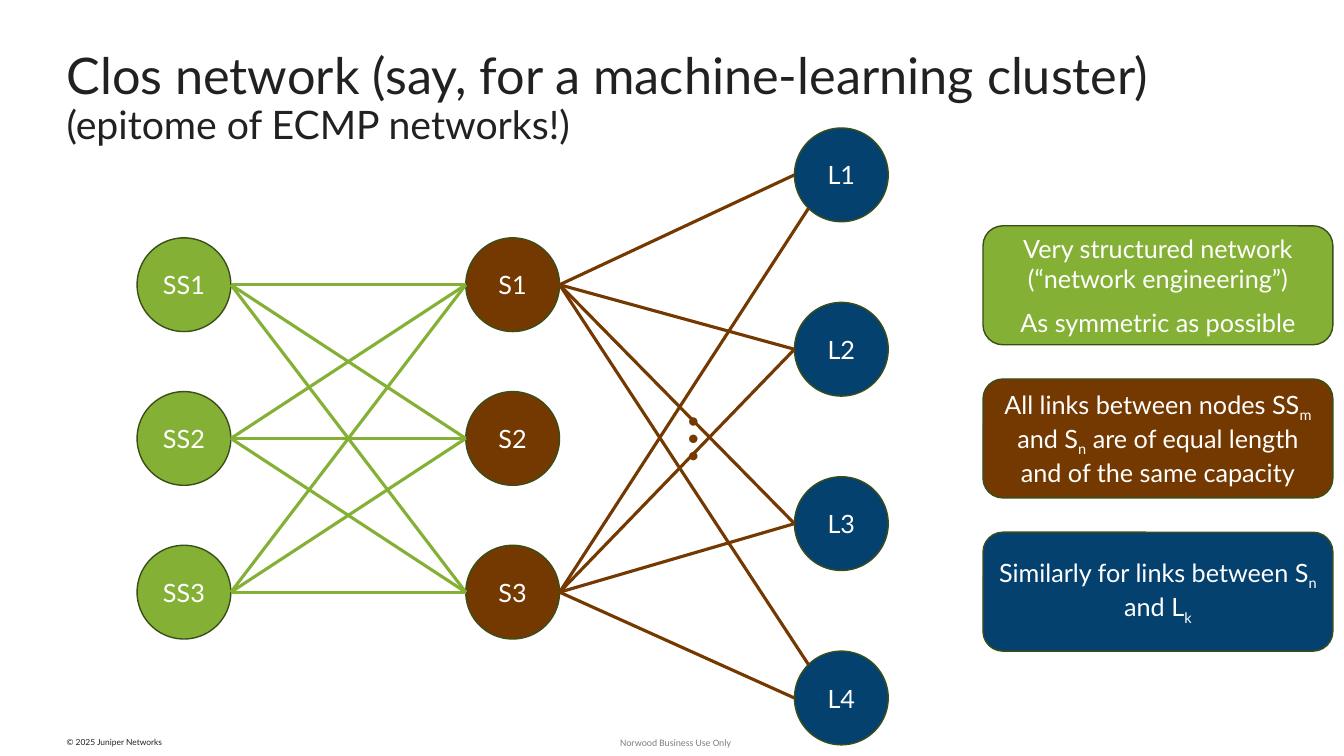
from lxml import etree
from pptx import Presentation
from pptx.dml.color import RGBColor
from pptx.enum import shapes, text
from pptx.oxml import ns
from pptx.util import Inches, Pt

GREEN = RGBColor(0x84, 0xB1, 0x35)
BROWN = RGBColor(0x74, 0x39, 0x00)
BLUE = RGBColor(0x04, 0x41, 0x6E)
EDGE = RGBColor(0x3A, 0x4E, 0x17)
WHITE = RGBColor(0xFF, 0xFF, 0xFF)
INK = RGBColor(0x21, 0x21, 0x21)
GRAY = RGBColor(0x80, 0x80, 0x80)

deck = Presentation()
deck.slide_width, deck.slide_height = Inches(13.33), Inches(7.5)
slide = deck.slides.add_slide(deck.slide_layouts[6])


def write(para, words, size, color, face="Lato"):
    run = para.add_run()
    run.text = words
    run.font.size, run.font.name = Pt(size), face
    run.font.color.rgb = color
    return run


def block(kind, spot, fill=None):
    spot = [Inches(n) for n in spot]
    if fill is None:
        item = slide.shapes.add_textbox(*spot)
        frame = item.text_frame
        frame.margin_left = frame.margin_right = 0
        frame.margin_top = frame.margin_bottom = 0
    else:
        item = slide.shapes.add_shape(kind, *spot)
        item.shadow.inherit = False
        item.fill.solid()
        item.fill.fore_color.rgb = fill
        item.line.color.rgb, item.line.width = EDGE, Pt(1)
        item.text_frame.vertical_anchor = text.MSO_ANCHOR.MIDDLE
    item.text_frame.word_wrap = True
    return item


foot = block(None, (0.66, 7.32, 1.18, 0.09)).text_frame.paragraphs[0]
foot.line_spacing = 0.9
write(foot, "© 2025 Juniper Networks", 6, INK)
use = block(None, (6.15, 7.31, 1.4, 0.12)).text_frame.paragraphs[0]
write(use, "Norwood Business Use Only", 7, GRAY, "Calibri")

title = block(None, (0.66, 0.07, 12.11, 1.4)).text_frame
title.vertical_anchor = text.MSO_ANCHOR.BOTTOM
head = title.paragraphs[0]
head.line_spacing = 0.9
write(head, "Clos network (say, for a machine-learning cluster)", 36, INK)
head.add_line_break()
write(head, "(epitome of ECMP networks!)", 28, INK)

SIZE, HALF, DIAG = 0.93, 0.465, 0.33
tiers = [
    ("SS", 3, 1.36, 2.36, 1.525, GREEN),
    ("S", 3, 4.62, 2.36, 1.525, BROWN),
    ("L", 4, 7.88, 1.27, 1.73, BLUE),
]
mids = {}
for tier, count, left, top, step, fill in tiers:
    mids[tier] = [top + i * step + HALF for i in range(count)]
    for i, mid in enumerate(mids[tier]):
        node = block(shapes.MSO_SHAPE.OVAL, (left, mid - HALF, SIZE, SIZE), fill)
        node.text_frame.word_wrap = False
        para = node.text_frame.paragraphs[0]
        para.alignment = text.PP_ALIGN.CENTER
        write(para, f"{tier}{i + 1}", 18, WHITE)

links = [(2.29, a, 4.62, b, GREEN) for a in mids["SS"] for b in mids["S"]]
for start, far, turn in ((0, 3, -DIAG), (2, 0, DIAG)):
    for i, mid in enumerate(mids["L"]):
        end = (8.02, mid + turn) if i == far else (7.88, mid)
        links.append((5.55, mids["S"][start], *end, BROWN))
for *ends, color in links:
    link = slide.shapes.add_connector(
        shapes.MSO_CONNECTOR.STRAIGHT, *[Inches(n) for n in ends])
    link.line.color.rgb, link.line.width = color, Pt(2.25)
    etree.SubElement(link._element.spPr, ns.qn("a:effectLst"))

dots = block(None, (6.41, 3.95, 0.5, 0.81))
dots.rotation = 270
dots.text_frame.word_wrap = False
write(dots.text_frame.paragraphs[0], "…", 48, BROWN)

notes = [
    (GREEN, [["Very structured network"], ["(“network engineering”)"],
             ["As symmetric as possible"]]),
    (BROWN, [["All links between nodes SS", "m", " and S", "n",
              " are of equal length and of the same capacity"]]),
    (BLUE, [["Similarly for links between S", "n", " and L", "k"]]),
]
for row, (fill, lines) in enumerate(notes):
    spot = (9.75, 2.24 + row * 1.52, 3.47, 1.18)
    frame = block(shapes.MSO_SHAPE.ROUNDED_RECTANGLE, spot, fill).text_frame
    for i, parts in enumerate(lines):
        para = frame.paragraphs[0] if i == 0 else frame.add_paragraph()
        para.alignment = text.PP_ALIGN.CENTER
        if i == 2:
            para.space_before = Pt(9.6)
        for j, part in enumerate(parts):
            run = write(para, part, 18, WHITE)
            if j % 2:
                run.font._element.set("baseline", "-25000")

deck.save("out.pptx")
